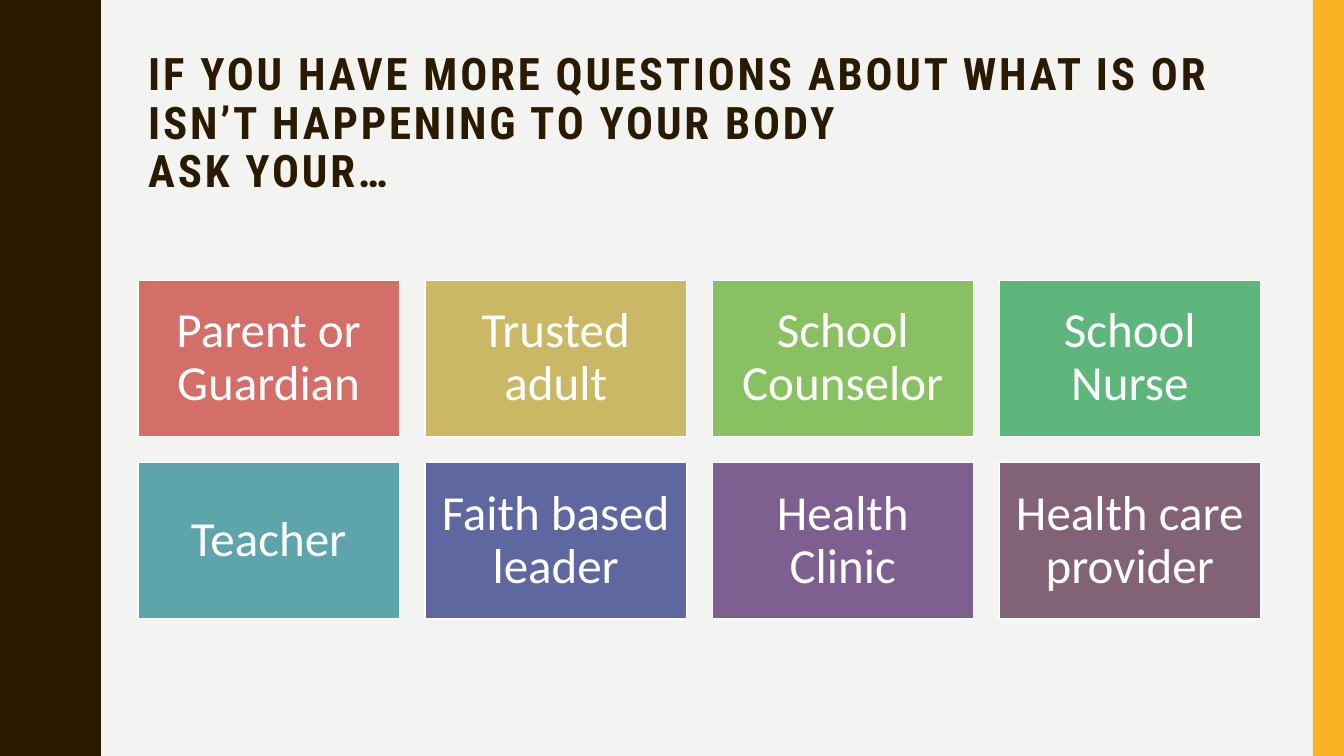
from pptx import Presentation
from pptx.dml.color import RGBColor
from pptx.enum.shapes import MSO_SHAPE
from pptx.enum.text import MSO_ANCHOR, MSO_AUTO_SIZE, PP_ALIGN
from pptx.util import Inches, Pt

RECT = MSO_SHAPE.RECTANGLE
MIDDLE = MSO_ANCHOR.MIDDLE
NO_FIT = MSO_AUTO_SIZE.NONE
LEFT, CENTER = PP_ALIGN.LEFT, PP_ALIGN.CENTER

WIDTH, HEIGHT = 13.33, 7.5
BROWN, YELLOW, WHITE, PAPER = "2A1A00", "F8B323", "FFFFFF", "F3F3F2"

TITLE = ("IF YOU HAVE MORE QUESTIONS ABOUT WHAT IS OR ISN’T HAPPENING "
         "TO YOUR BODY\nASK YOUR…")
PEOPLE = [
    ("Parent or Guardian", "D36F68"), ("Trusted adult", "CAB864"),
    ("School Counselor", "89C162"), ("School Nurse", "5FB67D"),
    ("Teacher", "5EA4AB"), ("Faith based leader", "5E679F"),
    ("Health Clinic", "7E6090"), ("Health care provider", "826276"),
]
COLUMNS = 4
GRID_LEFT, GRID_TOP = 1.37, 2.78
CARD_W, CARD_H = 2.59, 1.55
STEP_X, STEP_Y = 2.847, 1.81

# Half a wave, as (x, y) points from trough to crest
HALF_WAVE = [
    (0.78, 0), (0.78, 0.07), (0.79, 0.14), (0.8, 0.2), (0.81, 0.25),
    (0.83, 0.29), (0.85, 0.33), (0.87, 0.38), (0.89, 0.42), (0.91, 0.46),
    (0.93, 0.5), (0.95, 0.55), (0.96, 0.61), (0.97, 0.68), (0.97, 0.75),
]
WAVE_LENGTH = 1.5


def rgb(value):
    return RGBColor.from_string(value)


def paint(sp, fill, line=None):
    sp.shadow.inherit = False
    sp.fill.solid()
    sp.fill.fore_color.rgb = rgb(fill)
    if line:
        sp.line.color.rgb = rgb(line)
        sp.line.width = Pt(1)
    else:
        sp.line.fill.background()


def add_rect(s, x, y, w, h, fill, line=None):
    sp = s.shapes.add_shape(RECT, Inches(x), Inches(y), Inches(w), Inches(h))
    paint(sp, fill, line)
    return sp


def write(sp, text, *, font, size, color, bold=False, align=LEFT, spacing=0,
          inset=None):
    """Fill a shape with one paragraph; a newline becomes a line break."""
    tf = sp.text_frame
    tf.word_wrap = True
    tf.auto_size = NO_FIT
    tf.vertical_anchor = MIDDLE
    if inset is not None:
        tf.margin_left = tf.margin_right = Inches(inset)
        tf.margin_top = tf.margin_bottom = Inches(inset)
    p = tf.paragraphs[0]
    p.alignment = align
    p.line_spacing = 0.9
    for i, part in enumerate(text.split("\n")):
        if i:
            p.add_line_break()
        r = p.add_run()
        r.text = part
        r.font.name = font
        r.font.size = Pt(size)
        r.font.bold = bold
        r.font.color.rgb = rgb(color)
        if spacing:
            r._r.get_or_add_rPr().set("spc", str(spacing * 100))


def add_wavy_band(s):
    wave = HALF_WAVE + [(x, WAVE_LENGTH - y) for x, y in HALF_WAVE[-2::-1]]
    edge = [(x, y + i * WAVE_LENGTH)
            for i in range(round(HEIGHT / WAVE_LENGTH)) for x, y in wave]
    builder = s.shapes.build_freeform(0, 0, scale=Inches(1))
    builder.add_line_segments(edge + [(0, HEIGHT)], close=True)
    paint(builder.convert_to_shape(), BROWN)


def add_title(s, text):
    title = s.shapes.title
    title.left, title.top = Inches(GRID_LEFT), Inches(0.42)
    title.width, title.height = Inches(11.13), Inches(1.63)
    write(title, text, font="Roboto Condensed", size=32, color=BROWN,
          bold=True, spacing=2)


def add_cards(s):
    for i, (name, fill) in enumerate(PEOPLE):
        row, col = divmod(i, COLUMNS)
        card = add_rect(s, GRID_LEFT + col * STEP_X, GRID_TOP + row * STEP_Y,
                        CARD_W, CARD_H, fill, WHITE)
        write(card, name, font="Calibri", size=35, color=WHITE, align=CENTER,
              inset=0.15)


def main():
    prs = Presentation()
    prs.slide_width, prs.slide_height = Inches(WIDTH), Inches(HEIGHT)
    s = prs.slides.add_slide(prs.slide_layouts[5])
    s.background.fill.solid()
    s.background.fill.fore_color.rgb = rgb(PAPER)
    add_wavy_band(s)
    add_rect(s, 13.02, 0, 0.31, HEIGHT, YELLOW)
    add_title(s, TITLE)
    add_cards(s)
    prs.save("out.pptx")


if __name__ == "__main__":
    main()
